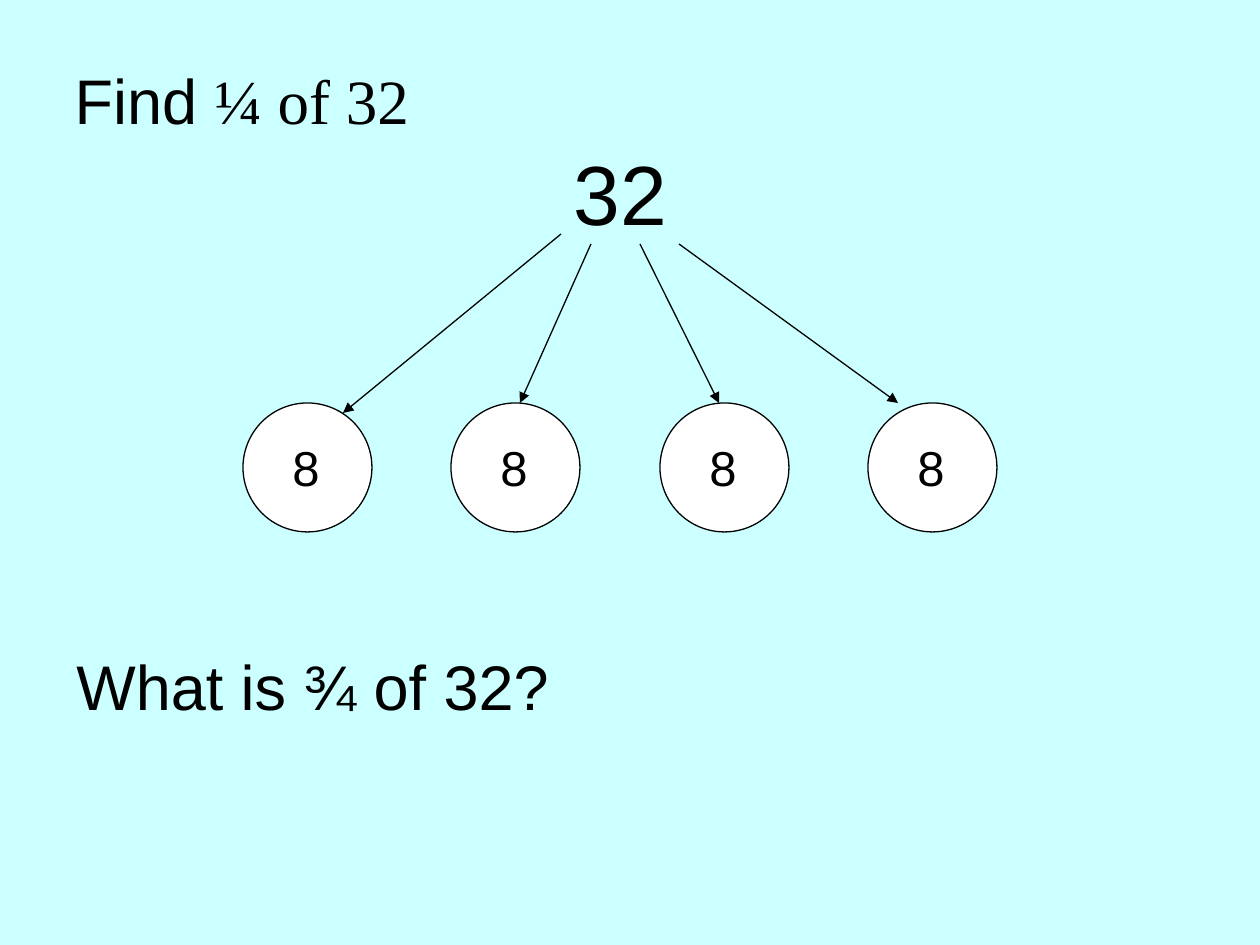
import pptx
import pptx.util
import pptx.dml.color
import pptx.enum.shapes
import pptx.enum.text
import pptx.oxml.ns
import lxml.etree

SCALE = 914400 / 126  # EMU in one px

THEME = {
    "back": pptx.dml.color.RGBColor.from_string("CCFFFF"),
    "ink": pptx.dml.color.RGBColor.from_string("000000"),
    "disc": pptx.dml.color.RGBColor.from_string("FFFFFF"),
    "sans": "Arial",
    "serif": "Times New Roman",
    "head": 36,
    "total": 48,
    "share": 28,
    "line": 0.75,
}


def px(*nums):
    return [pptx.util.Emu(round(num * SCALE)) for num in nums]


def write(shape, runs, size):
    frame = shape.text_frame
    frame.word_wrap = False
    frame.auto_size = pptx.enum.text.MSO_AUTO_SIZE.SHAPE_TO_FIT_TEXT
    frame.vertical_anchor = pptx.enum.text.MSO_ANCHOR.TOP
    para = frame.paragraphs[0]
    para.alignment = pptx.enum.text.PP_ALIGN.LEFT
    for text, face in runs:
        run = para.add_run()
        run.text = text
        run.font.name = face
        run.font.size = pptx.util.Pt(size)
        run.font.color.rgb = THEME["ink"]


deck = pptx.Presentation()
deck.slide_width, deck.slide_height = px(1260, 945)
slide = deck.slides.add_slide(deck.slide_layouts[5])  # Title Only
slide.background.fill.solid()
slide.background.fill.fore_color.rgb = THEME["back"]
shapes = slide.shapes

# Title
title = shapes.title
title.left, title.top, title.width, title.height = px(62, 55, 366, 88)
write(title, [("Find ", THEME["sans"]), ("¼ of 32", THEME["serif"])], THEME["head"])

# The whole number
total = shapes.add_textbox(*px(561, 135, 122, 113))
write(total, [("32", THEME["sans"])], THEME["total"])

# Four equal shares, spread evenly
for part in range(4):
    left = 243 + round(part * 625 / 3)
    disc = shapes.add_shape(
        pptx.enum.shapes.MSO_SHAPE.OVAL, *px(left, 403, 129, 129))
    disc.shadow.inherit = False
    disc.fill.solid()
    disc.fill.fore_color.rgb = THEME["disc"]
    disc.line.color.rgb = THEME["ink"]
    disc.line.width = pptx.util.Pt(THEME["line"])
    share = shapes.add_textbox(*px(left + 37, 431, 54, 72))
    write(share, [("8", THEME["sans"])], THEME["share"])

# Arrows from the whole to its shares
ARROWS = [
    (561, 234, 343, 413),
    (591, 244, 520, 403),
    (640, 244, 719, 403),
    (679, 244, 898, 403),
]
for ends in ARROWS:
    arrow = shapes.add_connector(
        pptx.enum.shapes.MSO_CONNECTOR.STRAIGHT, *px(*ends))
    arrow.line.color.rgb = THEME["ink"]
    arrow.line.width = pptx.util.Pt(THEME["line"])
    line = arrow._element.spPr.find(pptx.oxml.ns.qn("a:ln"))
    tip = lxml.etree.SubElement(line, pptx.oxml.ns.qn("a:tailEnd"))
    tip.set("type", "triangle")
    lxml.etree.SubElement(
        arrow._element.spPr, pptx.oxml.ns.qn("a:effectLst"))

# Follow-up question
quiz = shapes.add_textbox(*px(64, 641, 502, 88))
write(quiz, [("What is ¾ of 32?", THEME["sans"])], THEME["head"])

deck.save("out.pptx")
